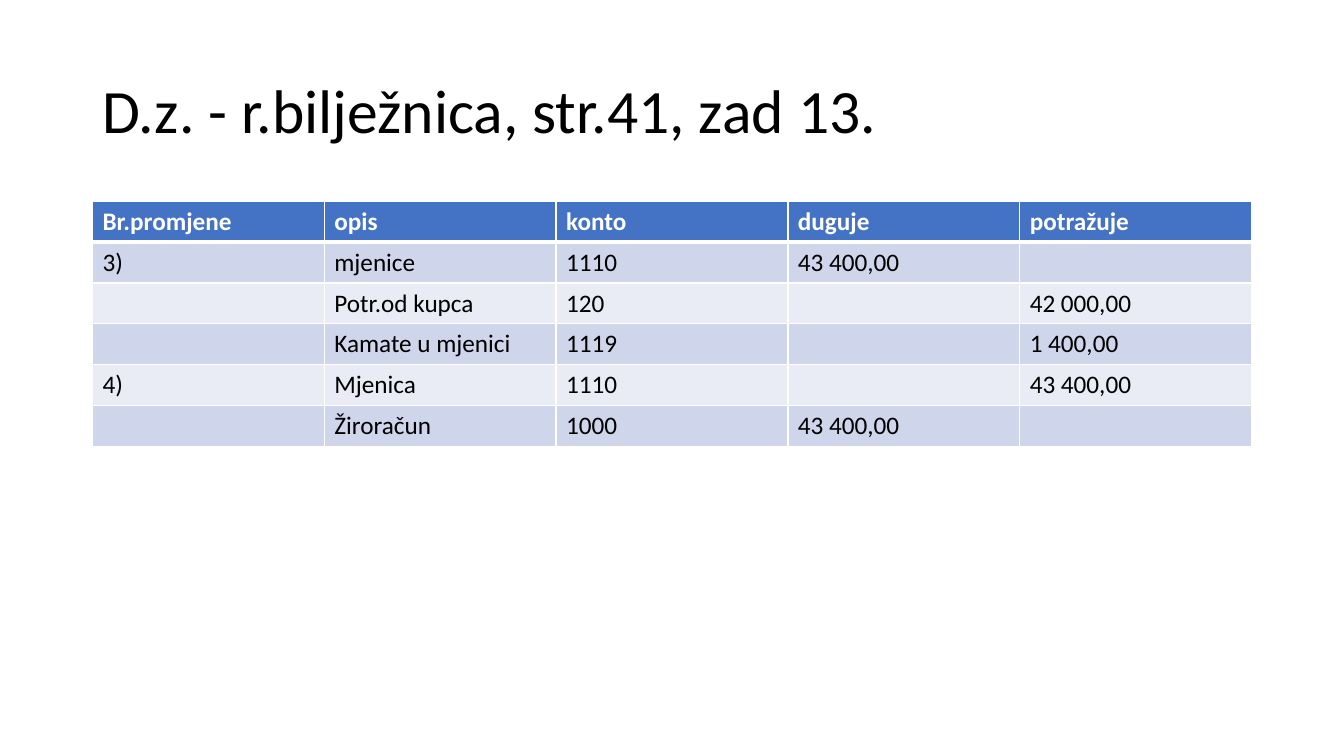
"""Build a slide with a bookkeeping journal table for a homework exercise."""
import lxml.etree
import pptx
import pptx.dml.color
import pptx.enum.text
import pptx.oxml
import pptx.oxml.ns
import pptx.util

Cm = pptx.util.Cm
Pt = pptx.util.Pt


def color(value):
    """Turn a hex string into a colour."""
    return pptx.dml.color.RGBColor.from_string(value)


def write_text(text_frame, text, size=18, hex_color="000000", bold=False, line_spacing=1.0):
    """Write one left-aligned paragraph with the given format."""
    paragraph = text_frame.paragraphs[0]
    paragraph.alignment = pptx.enum.text.PP_ALIGN.LEFT
    paragraph.line_spacing = line_spacing
    paragraph.font.size = Pt(size)
    if text:
        run = paragraph.add_run()
        run.text = text
        run.font.name = "Calibri"
        run.font.size = Pt(size)
        run.font.bold = bold
        run.font.color.rgb = color(hex_color)


presentation = pptx.Presentation()
presentation.slide_width = Cm(33.87)
presentation.slide_height = Cm(19.05)
slide = presentation.slides.add_slide(presentation.slide_layouts[5])

title = slide.shapes.title
title.left, title.top, title.width, title.height = Cm(2.33), Cm(1.01), Cm(29.21), Cm(3.68)
title.text_frame.vertical_anchor = pptx.enum.text.MSO_ANCHOR.MIDDLE
title.text_frame.auto_size = pptx.enum.text.MSO_AUTO_SIZE.NONE
write_text(title.text_frame, "D.z. - r.bilježnica, str.41, zad 13.", size=44, line_spacing=0.9)

journal = [
    ["Br.promjene", "opis", "konto", "duguje", "potražuje"],
    ["3)", "mjenice", "1110", "43 400,00", ""],
    ["", "Potr.od kupca", "120", "", "42 000,00"],
    ["", "Kamate u mjenici", "1119", "", "1 400,00"],
    ["4)", "Mjenica", "1110", "", "43 400,00"],
    ["", "Žiroračun", "1000", "43 400,00", ""],
]
table = slide.shapes.add_table(
    len(journal), len(journal[0]), Cm(2.33), Cm(5.07), Cm(29.21), Cm(6.18)
).table

for row_index, entries in enumerate(journal):
    is_header = row_index == 0
    fill_color = "4472C4" if is_header else ("E9EBF5", "CFD5EA")[row_index % 2]
    for column_index, entry in enumerate(entries):
        cell = table.cell(row_index, column_index)
        write_text(cell.text_frame, entry, bold=is_header,
                   hex_color="FFFFFF" if is_header else "000000")
        properties = cell._tc.get_or_add_tcPr()
        for side in ("L", "R", "T", "B"):
            touches_header_edge = (row_index, side) in ((0, "B"), (1, "T"))
            line = lxml.etree.SubElement(properties, pptx.oxml.ns.qn(f"a:ln{side}"))
            line.set("w", str(Pt(3 if touches_header_edge else 1)))
            fill = lxml.etree.SubElement(line, pptx.oxml.ns.qn("a:solidFill"))
            lxml.etree.SubElement(fill, pptx.oxml.ns.qn("a:srgbClr")).set("val", "FFFFFF")
        cell.fill.solid()
        cell.fill.fore_color.rgb = color(fill_color)

presentation.save("out.pptx")
